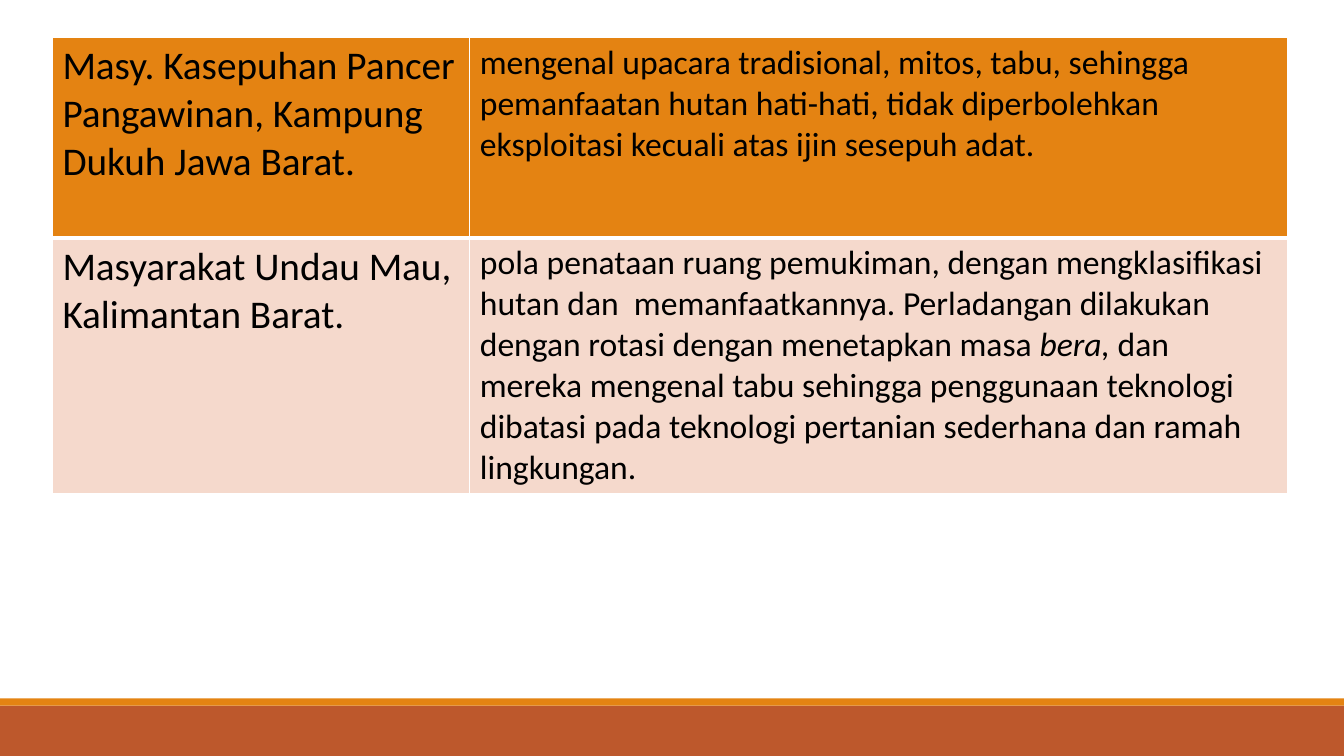
from pptx import Presentation
from pptx.util import Inches, Pt
from pptx.dml.color import RGBColor
from pptx.enum.shapes import MSO_SHAPE
from lxml.etree import SubElement
from pptx.oxml.ns import qn

COLORS = {"rust": "BD582C", "orange": "E48312", "pale": "F5D9CC",
          "black": "000000", "white": "FFFFFF"}


def paint(fill, name):
    fill.solid()
    fill.fore_color.rgb = RGBColor.from_string(COLORS[name])


def edge(cell, side, width):
    """Draw a white border on one side of a cell."""
    line = SubElement(cell._tc.get_or_add_tcPr(), qn("a:ln" + side), w=str(Pt(width)))
    fill = SubElement(line, qn("a:solidFill"))
    SubElement(fill, qn("a:srgbClr"), val=COLORS["white"])


prs = Presentation()
prs.slide_width, prs.slide_height = Inches(13.33), Inches(7.5)
slide = prs.slides.add_slide(prs.slide_layouts[6])
paint(slide.background.fill, "white")

# Footer bands
for top, height, color in [(7, 0.5, "rust"), (6.93, 0.07, "orange")]:
    band = slide.shapes.add_shape(MSO_SHAPE.RECTANGLE, 0, Inches(top),
                                  prs.slide_width, Inches(height))
    band.shadow.inherit = False
    paint(band.fill, color)
    band.line.fill.background()

# Each row: height, fill, bottom border width, cells as (text, italic) runs
rows = [
    (1.99, "orange", 3, [
        [("Masy. Kasepuhan Pancer Pangawinan, Kampung Dukuh Jawa Barat.", False)],
        [("mengenal upacara tradisional, mitos, tabu, sehingga pemanfaatan hutan "
          "hati-hati, tidak diperbolehkan eksploitasi kecuali atas ijin sesepuh adat.", False)],
    ]),
    (2.54, "pale", 1, [
        [("Masyarakat Undau Mau, Kalimantan Barat.", False)],
        [("pola penataan ruang pemukiman, dengan mengklasifikasi hutan dan  memanfaatkannya. "
          "Perladangan dilakukan dengan rotasi dengan menetapkan masa ", False),
         ("bera, ", True),
         ("dan mereka mengenal tabu sehingga penggunaan teknologi dibatasi pada "
          "teknologi pertanian sederhana dan ramah lingkungan.", False)],
    ]),
]
widths, sizes = [4.14, 8.11], [28, 24]

table = slide.shapes.add_table(len(rows), len(widths), Inches(0.52), Inches(0.37),
                               Inches(sum(widths)), Inches(4.53)).table
for col, width in zip(table.columns, widths):
    col.width = Inches(width)

for r, (height, color, base, cells) in enumerate(rows):
    table.rows[r].height = Inches(height)
    for c, runs in enumerate(cells):
        cell = table.cell(r, c)
        top = rows[r - 1][2] if r else 1
        for side, width in [("L", 1), ("R", 1), ("T", top), ("B", base)]:
            edge(cell, side, width)
        paint(cell.fill, color)
        para = cell.text_frame.paragraphs[0]
        for text, italic in runs:
            run = para.add_run()
            run.text = text
            font = run.font
            font.name, font.size = "Calibri", Pt(sizes[c])
            font.bold, font.italic = False, italic
            font.color.rgb = RGBColor.from_string(COLORS["black"])

prs.save("out.pptx")
